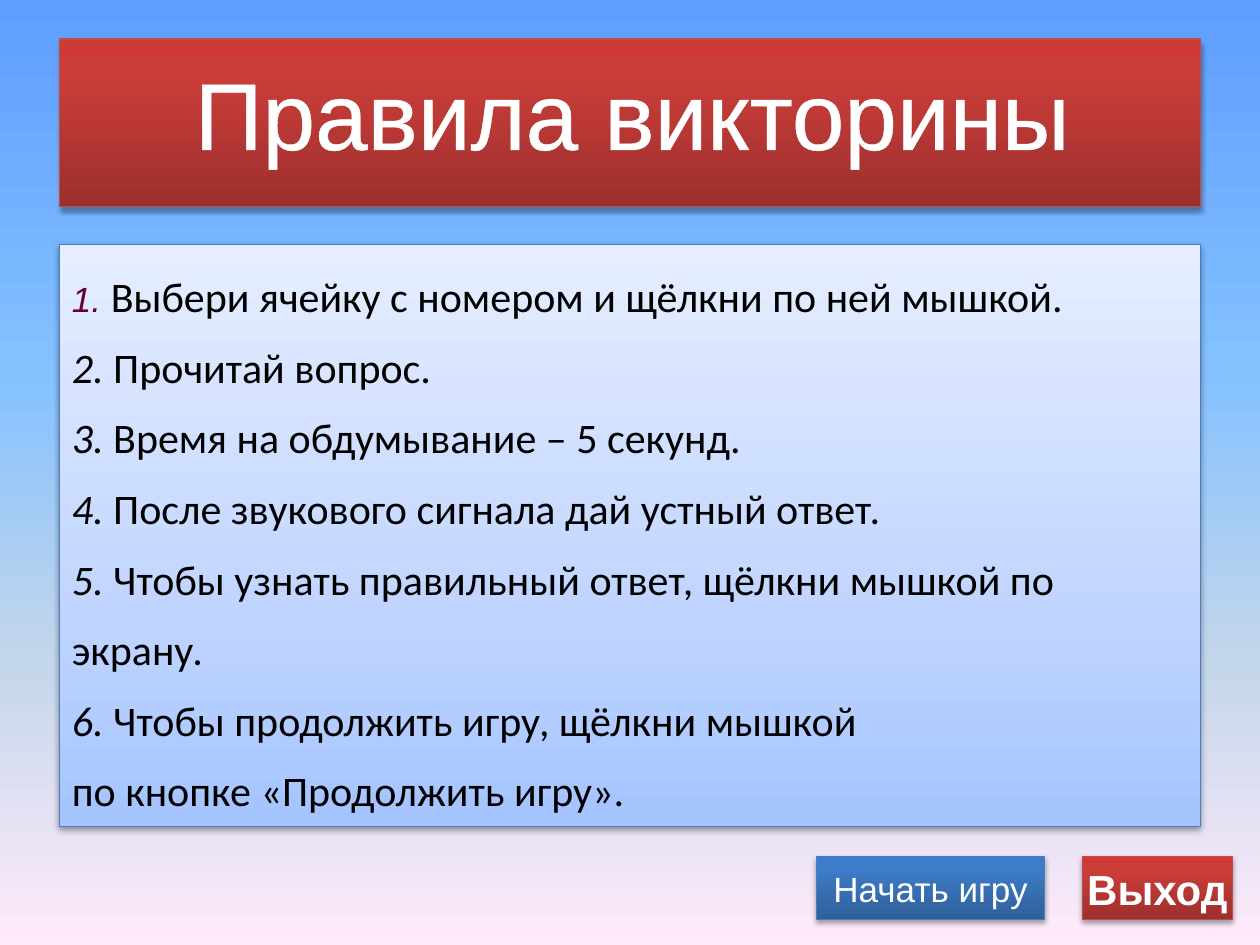
from lxml.etree import SubElement
from pptx import Presentation
from pptx.dml.color import RGBColor
from pptx.enum.shapes import MSO_SHAPE
from pptx.enum.text import MSO_ANCHOR, MSO_AUTO_SIZE, PP_ALIGN
from pptx.oxml import parse_xml
from pptx.oxml.ns import nsdecls, qn
from pptx.util import Inches, Pt

RED = [(0, "9C2F2D"), (80, "CB3E3A"), (100, "CE3B37")]
BLUE = [(0, "2F5F99"), (80, "3D7CC7"), (100, "3A7CCB")]
PALE = [(0, "A4C4FF"), (35, "BFD4FF"), (100, "E6EEFF")]
SKY = [(0, "5E9EFF"), (40, "85C2FF"), (70, "C4D6EB"), (100, "FFEBFA")]
RED_LINE, BLUE_LINE = "BF4C48", "4B7EBC"

RULES = [
    ("1. ", "Выбери ячейку с номером и щёлкни по ней мышкой."),
    ("2.", " Прочитай вопрос."),
    ("3.", " Время на обдумывание – 5 секунд."),
    ("4.", " После звукового сигнала дай устный ответ."),
    ("5.", " Чтобы узнать правильный ответ, щёлкни мышкой по экрану."),
    ("6.", " Чтобы продолжить игру, щёлкни мышкой"),
    ("", "по кнопке «Продолжить игру»."),
]


def color(value):
    return RGBColor.from_string(value)


def gradient(stops, angle):
    marks = "".join(
        f'<a:gs pos="{pos * 1000}"><a:srgbClr val="{value}"/></a:gs>'
        for pos, value in stops)
    return parse_xml(
        f'<a:gradFill {nsdecls("a")} rotWithShape="1"><a:gsLst>{marks}</a:gsLst>'
        f'<a:lin ang="{angle * 60000}" scaled="0"/></a:gradFill>')


def place(shape, box):
    shape.left, shape.top, shape.width, shape.height = (Inches(n) for n in box)


def style_panel(shape, stops, line, alpha=35, distance=1.8):
    """Gradient fill, thin outline and a soft shadow below."""
    shape.fill.solid()
    props = shape.fill._xPr
    props.replace(props.find(qn("a:solidFill")), gradient(stops, 270))
    shape.line.color.rgb = color(line)
    shape.line.width = Pt(0.75)
    props.append(parse_xml(
        f'<a:effectLst {nsdecls("a")}><a:outerShdw blurRad="{Pt(3.1)}" '
        f'dist="{Pt(distance)}" dir="5400000" rotWithShape="0">'
        f'<a:srgbClr val="000000"><a:alpha val="{alpha * 1000}"/></a:srgbClr>'
        '</a:outerShdw></a:effectLst>'))


def add_panel(slide, box, stops, line):
    panel = slide.shapes.add_shape(MSO_SHAPE.RECTANGLE, *(Inches(n) for n in box))
    style_panel(panel, stops, line)
    return panel


def write(para, text, font="Calibri", size=24, fill="000000", bold=False, italic=False):
    span = para.add_run()
    span.text = text
    span.font.name, span.font.size = font, Pt(size)
    span.font.color.rgb = color(fill)
    span.font.bold, span.font.italic = bold, italic
    return span


def add_background(slide):
    slide.background.fill.solid()
    props = slide.background.fill._xPr
    props.replace(props.find(qn("a:solidFill")), gradient(SKY, 90))


def add_title(slide, box):
    left, top, width, _ = box
    add_panel(slide, box, RED, RED_LINE)
    title = slide.shapes.title
    place(title, (left + 0.94, top + 0.08, width - 1.84, 1.01))
    slide.shapes._spTree.append(title._element)  # in front of the panel
    frame = title.text_frame
    frame.word_wrap = False
    frame.auto_size = MSO_AUTO_SIZE.NONE
    frame.vertical_anchor = MSO_ANCHOR.TOP
    para = frame.paragraphs[0]
    para.alignment = PP_ALIGN.CENTER
    span = write(para, "Правила викторины", font="Arial", size=54, fill="FFFFFF")
    span.font._element.insert(0, parse_xml(
        f'<a:ln {nsdecls("a")} w="{Pt(1.45)}"><a:solidFill>'
        '<a:srgbClr val="FFFFFF"/></a:solidFill></a:ln>'))


def add_rules(slide, box):
    body = slide.placeholders[1]
    place(body, box)
    style_panel(body, PALE, BLUE_LINE, alpha=38, distance=1.6)
    frame = body.text_frame
    frame.word_wrap = True
    frame.auto_size = MSO_AUTO_SIZE.NONE
    frame.vertical_anchor = MSO_ANCHOR.TOP
    for index, (number, rule) in enumerate(RULES):
        para = frame.add_paragraph() if index else frame.paragraphs[0]
        para.line_spacing = 1.4
        para.space_before = Pt(0)
        props = para._p.get_or_add_pPr()
        props.set("marL", "0")
        props.set("indent", "0")
        SubElement(props, qn("a:buNone"))
        if index == 0:
            write(para, number, font="Arial", size=20, fill="660033", italic=True)
        elif number:
            write(para, number, italic=True)
        write(para, rule)


def add_button(slide, box, text, stops, line, **style):
    button = add_panel(slide, box, stops, line)
    frame = button.text_frame
    frame.word_wrap = False
    frame.vertical_anchor = MSO_ANCHOR.MIDDLE
    para = frame.paragraphs[0]
    para.alignment = PP_ALIGN.CENTER
    write(para, text, font="Arial", fill="FFFFFF", **style)


def main():
    deck = Presentation()
    deck.slide_width, deck.slide_height = Inches(10), Inches(7.5)
    slide = deck.slides.add_slide(deck.slide_layouts[1])
    add_background(slide)
    # Rules of the quiz
    add_rules(slide, (0.47, 1.94, 9.06, 4.62))
    # Buttons
    add_button(slide, (6.48, 6.8, 1.81, 0.5), "Начать игру", BLUE, BLUE_LINE, size=20)
    add_button(slide, (8.59, 6.8, 1.19, 0.5), "Выход", RED, RED_LINE, size=24, bold=True)
    # Heading
    add_title(slide, (0.47, 0.31, 9.06, 1.33))
    deck.save("out.pptx")


if __name__ == "__main__":
    main()
